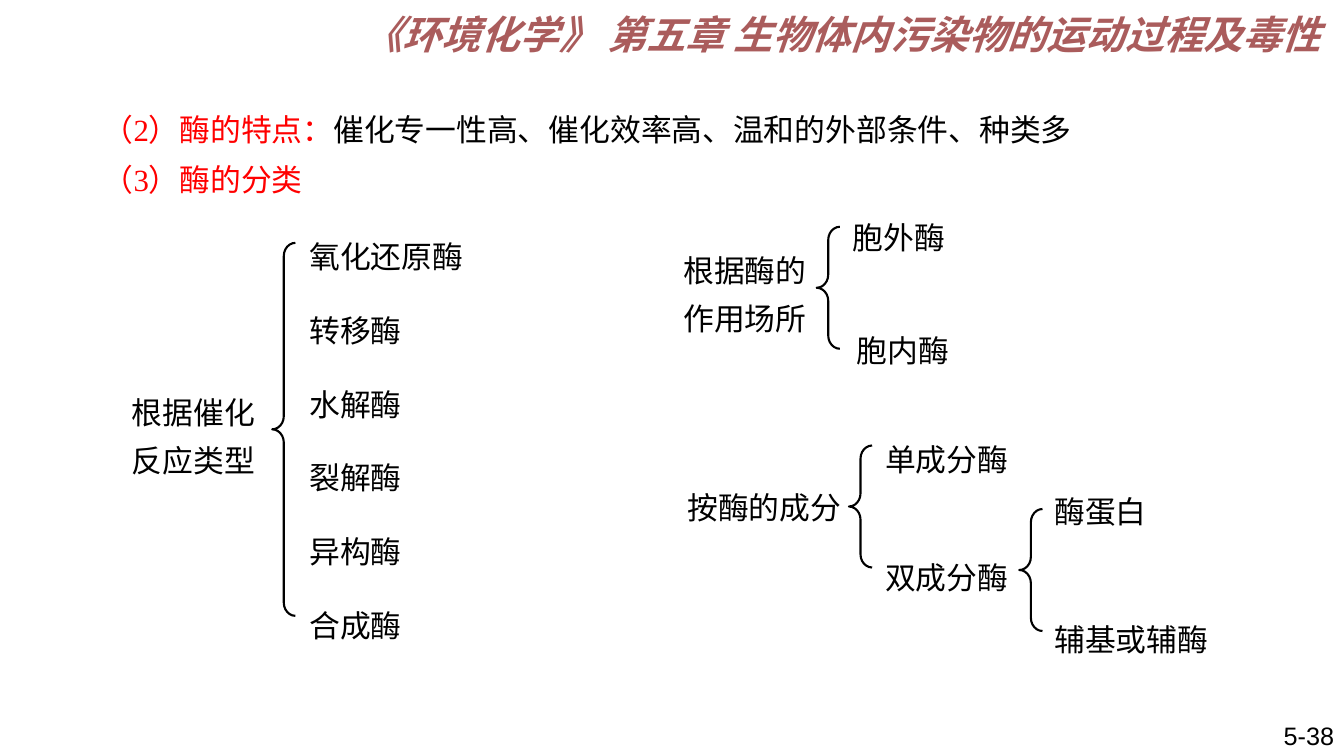
import pptx
import pptx.util
import pptx.dml.color
import pptx.enum.shapes
import pptx.enum.text
import lxml.etree
from dataclasses import dataclass

Inches = pptx.util.Inches
Pt = pptx.util.Pt
RGB = pptx.dml.color.RGBColor
ALIGN = pptx.enum.text.PP_ALIGN
ANCHOR = pptx.enum.text.MSO_ANCHOR

CHAPTER = "《环境化学》 第五章 生物体内污染物的运动过程及毒性"
PAGE = "5-38"
POINTS = [
    ("（2）酶的特点：", "催化专一性高、催化效率高、温和的外部条件、种类多"),
    ("（3）酶的分类", ""),
]
CRITERIA = [
    (["根据催化", "反应类型"], (1.21, 3.75, 1.46, 1.03)),
    (["根据酶的", "作用场所"], (6.68, 2.34, 1.44, 1.03)),
    (["按酶的成分"], (6.72, 4.69, 1.82, 0.51)),
]
REACTION_TYPES = ["氧化还原酶", "转移酶", "水解酶", "裂解酶", "异构酶", "合成酶"]
REACTION_BOX = (2.97, 1.94, 1.82, 4.41)
BRANCHES = [
    ("胞外酶", 8.36, 1.94),
    ("胞内酶", 8.4, 3.06),
    ("单成分酶", 8.68, 4.14),
    ("双成分酶", 8.68, 5.31),
    ("酶蛋白", 10.36, 4.66),
    ("辅基或辅酶", 10.36, 5.93),
]
BRANCH_SIZE = (1.77, 0.57)
BRACES = [(2.7, 2.41, 3.7), (8.1, 2.25, 1.21), (8.42, 4.42, 1.21), (10.11, 5.05, 1.21)]
BRACE_WIDTH = 0.23


@dataclass(frozen=True)
class Theme:
    ink: RGB = RGB(0, 0, 0)
    accent: RGB = RGB(0xFF, 0, 0)
    heading: RGB = RGB(0xAA, 0x5C, 0x5C)
    cjk: str = "Noto Sans CJK SC"
    heading_face: str = "Noto Sans CJK JP"
    serif: str = "Times New Roman"
    sans: str = "Arial"
    heading_size: int = 28
    text_size: int = 22
    page_size: int = 18
    brace_line: float = 1.5


THEME = Theme()


def place(shape, box):
    shape.left, shape.top, shape.width, shape.height = map(Inches, box)


def style(paragraph, face, size, color):
    paragraph.font.name = face
    paragraph.font.size = Pt(size)
    paragraph.font.color.rgb = color


def add_lines(slide, lines, box, spacing, before=0):
    frame = slide.shapes.add_textbox(*map(Inches, box)).text_frame
    frame.word_wrap = True
    frame.text = "\n".join(lines)
    for paragraph in frame.paragraphs:
        style(paragraph, THEME.cjk, THEME.text_size, THEME.ink)
        paragraph.line_spacing = spacing
    frame.paragraphs[0].space_before = Pt(before)
    return frame


def add_heading(slide):
    heading = slide.shapes.title
    place(heading, (3.44, 0.05, 9.76, 0.57))
    frame = heading.text_frame
    frame.text = CHAPTER
    frame.vertical_anchor = ANCHOR.MIDDLE
    paragraph = frame.paragraphs[0]
    paragraph.alignment = ALIGN.RIGHT
    style(paragraph, THEME.heading_face, THEME.heading_size, THEME.heading)
    paragraph.font.bold = paragraph.font.italic = True


def add_points(slide):
    body = slide.placeholders[1]
    place(body, (0.92, 1.01, 11.34, 1.03))
    frame = body.text_frame
    for index, (topic, detail) in enumerate(POINTS):
        paragraph = frame.paragraphs[0] if index == 0 else frame.add_paragraph()
        style(paragraph, THEME.serif, THEME.text_size, THEME.ink)
        paragraph.line_spacing = 1.1
        paragraph.space_before = Pt(7 * index)
        properties = paragraph._p.get_or_add_pPr()
        properties.set("marL", "0")
        properties.set("indent", "0")
        lxml.etree.SubElement(properties, pptx.oxml.ns.qn("a:buNone"))
        properties.append(properties.find(pptx.oxml.ns.qn("a:defRPr")))
        topic_run = paragraph.add_run()
        topic_run.text = topic
        topic_run.font.color.rgb = THEME.accent
        if detail:
            paragraph.add_run().text = detail


def add_brace(slide, left, top, height):
    brace = slide.shapes.add_shape(
        pptx.enum.shapes.MSO_SHAPE.LEFT_BRACE,
        *map(Inches, (left, top, BRACE_WIDTH, height)))
    brace.adjustments[0] = 0.57
    brace.shadow.inherit = False
    brace.fill.background()
    brace.line.color.rgb = THEME.ink
    brace.line.width = Pt(THEME.brace_line)


def main():
    deck = pptx.Presentation()
    deck.slide_width, deck.slide_height = Inches(13.33), Inches(7.5)
    slide = deck.slides.add_slide(deck.slide_layouts[1])
    add_heading(slide)
    add_points(slide)
    for lines, box in CRITERIA:
        add_lines(slide, lines, box, 1.3)
    add_lines(slide, REACTION_TYPES, REACTION_BOX, 2.0)
    for branch, left, top in BRANCHES:
        add_lines(slide, [branch], (left, top, *BRANCH_SIZE), 1.5)
    for brace in BRACES:
        add_brace(slide, *brace)
    page = add_lines(slide, [PAGE], (10.33, 7.1, 3, 0.4), 1.0)
    page.vertical_anchor = ANCHOR.MIDDLE
    page.paragraphs[0].alignment = ALIGN.RIGHT
    style(page.paragraphs[0], THEME.sans, THEME.page_size, THEME.ink)
    deck.save("out.pptx")


if __name__ == "__main__":
    main()
